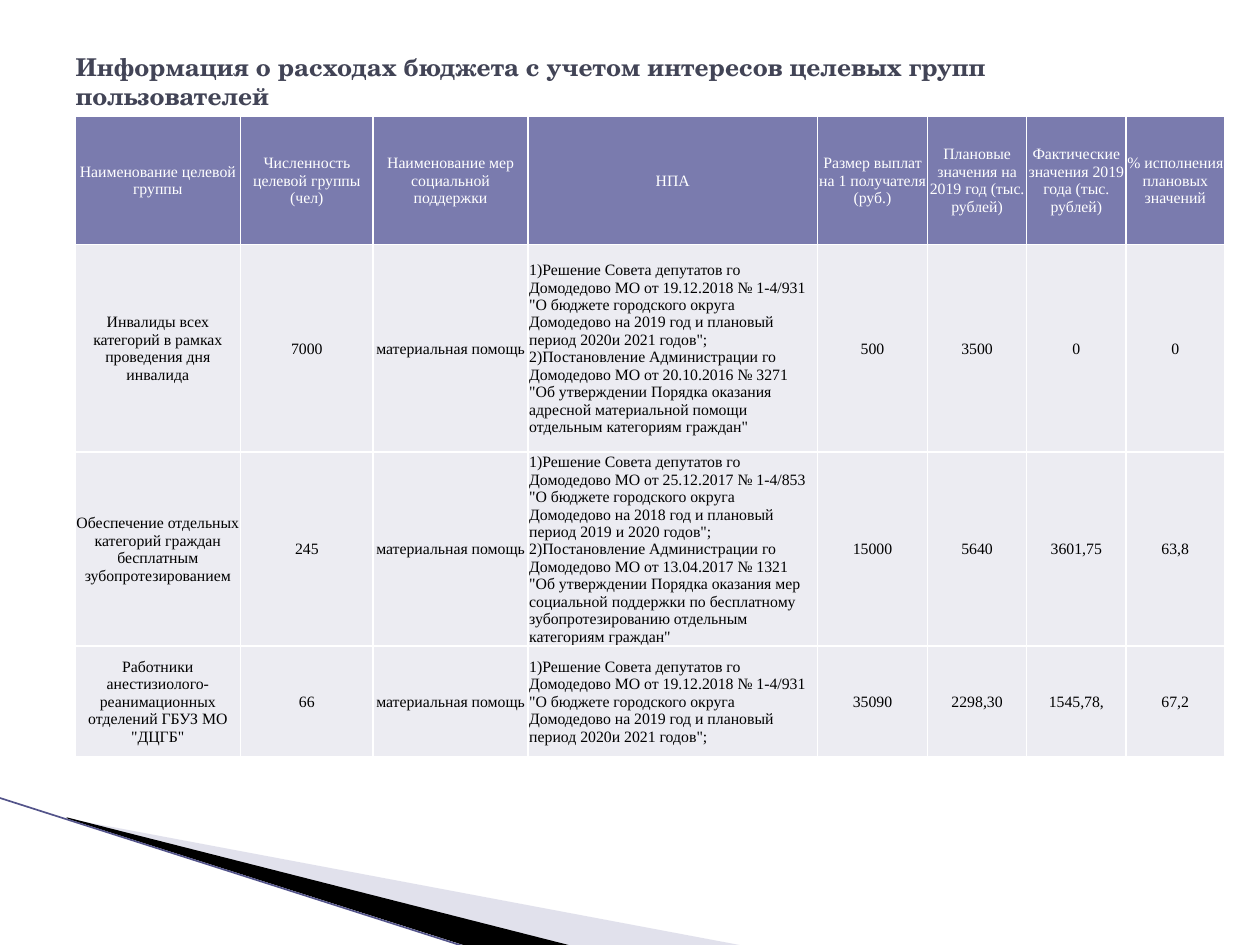
from lxml import etree
from pptx import Presentation
from pptx import util as u
from pptx.dml.color import RGBColor
from pptx.enum import shapes, text
from pptx.oxml import ns

Pt = u.Pt
COLORS = {
    "title": "424456", "header": "7A7BAE", "body": "ECECF2", "white": "FFFFFF",
    "black": "000000", "pale": "B6B6D1", "line": "53548A",
}


def rgb(name):
    return RGBColor.from_string(COLORS[name])


def sub(parent, tag, **attrs):
    return etree.SubElement(parent, ns.qn(tag), **attrs)


prs = Presentation()
prs.slide_width, prs.slide_height = Pt(720), Pt(540)
s = prs.slides.add_slide(prs.slide_layouts[5])

wedges = [
    ("pale", [(39.6, 468.4), (428.4, 540.6), (328.4, 540.6), (39.6, 468)]),
    ("black", [(38.2, 467.3), (329, 540.6), (267.8, 541.4), (38.9, 468)]),
]
for color, points in wedges:
    fb = s.shapes.build_freeform(*points[0], scale=Pt(1))
    fb.add_line_segments(points[1:], close=True)
    sp = fb.convert_to_shape()
    sp.shadow.inherit = False
    sp.line.fill.background()
    sp.fill.solid()
    sp.fill.fore_color.rgb = rgb(color)
    if color == "pale":
        fill_color = sp.fill._xPr.find(".//" + ns.qn("a:srgbClr"))
        sub(fill_color, "a:alpha", val="40000")

edge = s.shapes.add_connector(
    shapes.MSO_CONNECTOR.STRAIGHT, Pt(-0.7), Pt(455.8), Pt(267.1), Pt(541.4))
edge.line.color.rgb = rgb("line")
edge.line.width = Pt(0.95)
sub(edge._element.spPr, "a:effectLst")

title = s.shapes.title
title.left, title.top, title.width, title.height = Pt(36), Pt(21.6), Pt(648), Pt(49.7)
tf = title.text_frame
tf.word_wrap = True
tf.auto_size = text.MSO_AUTO_SIZE.NONE
tf.vertical_anchor = text.MSO_ANCHOR.MIDDLE
p = tf.paragraphs[0]
p.alignment = text.PP_ALIGN.LEFT
r = p.add_run()
r.text = "Информация о расходах бюджета с учетом интересов целевых групп пользователей"
r.font.name, r.font.size, r.font.bold = "TeX Gyre Schola", Pt(14), True
r.font.color.rgb = rgb("title")

aid = "материальная помощь"
budget_2019 = (
    '1)Решение Совета депутатов го Домодедово МО от 19.12.2018 № 1-4/931 "О бюджете '
    'городского округа Домодедово на 2019 год и плановый период 2020и 2021 годов";')
disability_act = (
    ' 2)Постановление Администрации го Домодедово МО от 20.10.2016 № 3271 "Об утверждении '
    'Порядка оказания адресной материальной помощи отдельным категориям граждан"')
dental_acts = (
    '1)Решение Совета депутатов го Домодедово МО от 25.12.2017 № 1-4/853 "О бюджете '
    'городского округа Домодедово на 2018 год и плановый период 2019 и 2020 годов"; '
    '2)Постановление Администрации го Домодедово МО от 13.04.2017 № 1321 "Об утверждении '
    'Порядка оказания мер социальной поддержки по бесплатному зубопротезированию '
    'отдельным категориям граждан"')
rows = [
    ["Наименование целевой группы", "Численность целевой группы (чел)",
     "Наименование мер социальной поддержки", "НПА",
     "Размер выплат на 1 получателя (руб.)", "Плановые значения на 2019 год (тыс. рублей)",
     "Фактические значения 2019 года (тыс. рублей)", "% исполнения плановых значений"],
    ["Инвалиды всех категорий в рамках проведения дня инвалида", "7000", aid,
     budget_2019 + disability_act, "500", "3500", "0", "0"],
    ["Обеспечение отдельных категорий граждан бесплатным зубопротезированием", "245", aid,
     dental_acts, "15000", "5640", "3601,75", "63,8"],
    ['Работники анестизиолого-реанимационных отделений ГБУЗ МО "ДЦГБ"', "66", aid,
     budget_2019, "35090", "2298,30", "1545,78,", "67,2"],
]
widths = [94.7, 75.7, 88.6, 165.4, 62.9, 56.7, 56.7, 56.4]
heights = [73.4, 118.8, 110.7, 63.4]
ACTS_COLUMN = 3

table = s.shapes.add_table(
    len(rows), len(widths), Pt(42.8), Pt(66.2), Pt(sum(widths)), Pt(sum(heights))).table
for column, width in zip(table.columns, widths):
    column.width = Pt(width)
for i, row in enumerate(rows):
    table.rows[i].height = Pt(heights[i])
    for j, value in enumerate(row):
        cell = table.cell(i, j)
        cell.margin_left = cell.margin_right = cell.margin_top = Pt(0.7)
        cell.margin_bottom = Pt(0)
        cell.vertical_anchor = text.MSO_ANCHOR.MIDDLE
        tc_pr = cell._tc.get_or_add_tcPr()
        for side in ("a:lnL", "a:lnR", "a:lnT", "a:lnB"):
            border = sub(tc_pr, side, w=str(Pt(1)))
            sub(sub(border, "a:solidFill"), "a:srgbClr", val=COLORS["white"])
        cell.fill.solid()
        cell.fill.fore_color.rgb = rgb("body" if i else "header")
        p = cell.text_frame.paragraphs[0]
        left = i and j == ACTS_COLUMN
        p.alignment = text.PP_ALIGN.LEFT if left else text.PP_ALIGN.CENTER
        r = p.add_run()
        r.text = value
        r.font.name, r.font.size, r.font.bold = "Times New Roman", Pt(9), False
        r.font.color.rgb = rgb("black" if i else "white")

prs.save("out.pptx")
